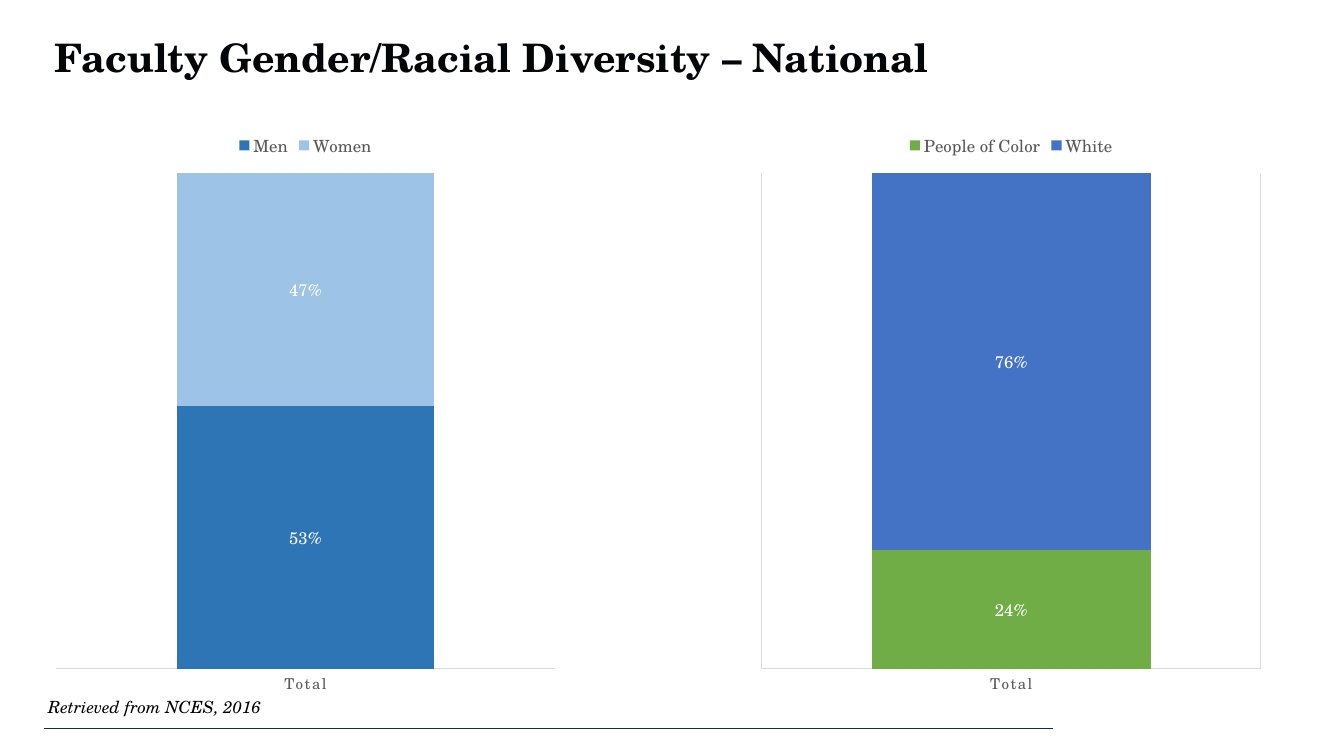
from pptx import Presentation, util as u
from pptx.chart import data
from pptx.dml.color import RGBColor
from pptx.enum import chart as ch, shapes, text
from pptx.oxml import ns
from lxml import etree

FONT = "TeX Gyre Schola"
COLORS = {
    "title": "030609", "black": "000000", "white": "FFFFFF",
    "label": "595959", "axis": "D9D9D9", "rule": "162B48",
    "men": "2E75B6", "women": "9DC3E6",
    "people_of_color": "70AD47", "white_faculty": "4472C4",
}
CHART_SIZE = (5.16, 5.8)
CHARTS = [
    {"at": (0.45, 1.21), "gap": 95, "grid": False,
     "series": [("Men", 0.53, "men"), ("Women", 0.47, "women")]},
    {"at": (7.45, 1.21), "gap": 79, "grid": True,
     "series": [("People of Color", 0.24, "people_of_color"),
                ("White", 0.76, "white_faculty")]},
]


def rgb(name):
    return RGBColor.from_string(COLORS[name])


def set_font(font, size, color, **styles):
    for name, value in {"name": FONT, "size": u.Pt(size), **styles}.items():
        setattr(font, name, value)
    font.color.rgb = rgb(color)


def set_line(line, color, width):
    line.color.rgb = rgb(color)
    line.width = u.Pt(width)


def add_title(s, box, words):
    sp = s.shapes.title
    for name, value in zip(("left", "top", "width", "height"), box):
        setattr(sp, name, u.Inches(value))
    tf = sp.text_frame
    tf.word_wrap = True
    tf.auto_size = text.MSO_AUTO_SIZE.NONE
    tf.vertical_anchor = text.MSO_ANCHOR.TOP
    p = tf.paragraphs[0]
    p.alignment = text.PP_ALIGN.LEFT
    p.line_spacing = 0.9
    r = p.add_run()
    r.text = words
    set_font(r.font, 28, "title", bold=True)


def add_share_chart(s, box, series, gap, grid):
    cd = data.CategoryChartData(number_format="0%")
    cd.categories = ["Total"]
    for name, share, _ in series:
        cd.add_series(name, [share])
    chart = s.shapes.add_chart(ch.XL_CHART_TYPE.COLUMN_STACKED_100,
                               *map(u.Inches, box), cd).chart
    set_font(chart.font, 10, "black")
    chart.has_title = False
    chart.has_legend = True
    legend = chart.legend
    legend.position = ch.XL_LEGEND_POSITION.TOP
    legend.include_in_layout = False
    set_font(legend.font, 12, "label")

    plot = chart.plots[0]
    plot.gap_width = gap
    plot.overlap = 100
    plot.vary_by_categories = False
    for bar, (_, _, color) in zip(plot.series, series):
        bar.format.fill.solid()
        bar.format.fill.fore_color.rgb = rgb(color)
        labels = bar.data_labels
        for name, value in {"show_value": True, "number_format": "0%",
                            "number_format_is_linked": False,
                            "position": ch.XL_LABEL_POSITION.CENTER}.items():
            setattr(labels, name, value)
        set_font(labels.font, 12, "white")

    cat = chart.category_axis
    cat.major_tick_mark = cat.minor_tick_mark = ch.XL_TICK_MARK.NONE
    set_line(cat.format.line, "axis", 0.75)
    set_font(cat.tick_labels.font, 10.64, "label")
    for props in cat._element.iter(ns.qn("a:defRPr")):
        props.set("spc", "120")
    cat.has_major_gridlines = grid
    if grid:
        set_line(cat.major_gridlines.format.line, "axis", 0.75)

    val = chart.value_axis
    val.visible = False
    val.has_major_gridlines = False
    val.tick_labels.number_format = "0%"
    val.tick_labels.number_format_is_linked = False


def add_source(s, box, words):
    tf = s.shapes.add_textbox(*map(u.Inches, box)).text_frame
    tf.word_wrap = False
    tf.auto_size = text.MSO_AUTO_SIZE.SHAPE_TO_FIT_TEXT
    r = tf.paragraphs[0].add_run()
    r.text = words
    set_font(r.font, 12, "black", italic=True)


def add_footer_rule(s, left, top, width):
    rule = s.shapes.add_connector(shapes.MSO_CONNECTOR.STRAIGHT,
                                  *map(u.Inches, (left, top, left + width, top)))
    set_line(rule.line, "rule", 0.5)
    etree.SubElement(rule._element.spPr, ns.qn("a:effectLst"))


def main():
    prs = Presentation()
    prs.slide_width, prs.slide_height = u.Inches(13.33), u.Inches(7.5)
    s = prs.slides.add_slide(prs.slide_layouts[5])
    add_footer_rule(s, 0.44, 7.23, 10)
    add_title(s, (0.44, 0.33, 12.44, 0.99), "Faculty Gender/Racial Diversity – National")
    for share in CHARTS:
        add_share_chart(s, share["at"] + CHART_SIZE, share["series"], share["gap"], share["grid"])
    add_source(s, (0.38, 6.86, 2.32, 0.3), "Retrieved from NCES, 2016")
    prs.save("out.pptx")


if __name__ == "__main__":
    main()
